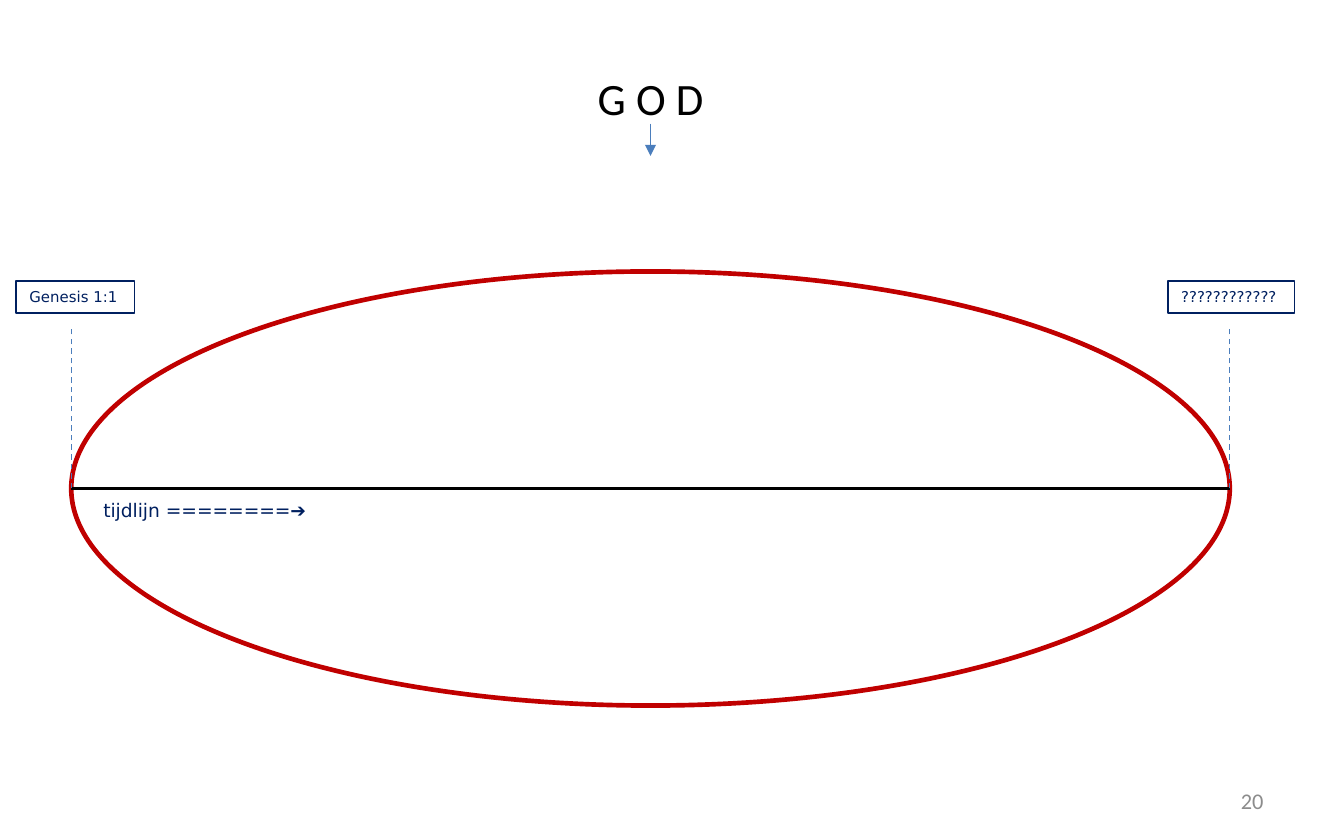
from lxml.etree import SubElement
from pptx import Presentation
from pptx.dml.color import RGBColor
from pptx.enum.dml import MSO_LINE
from pptx.enum.shapes import MSO_CONNECTOR, MSO_SHAPE
from pptx.enum.text import MSO_ANCHOR, PP_ALIGN
from pptx.oxml.ns import qn
from pptx.util import Inches, Pt

WHITE = RGBColor(0xFF, 0xFF, 0xFF)
BLACK = RGBColor(0, 0, 0)
GRAY = RGBColor(0x8C, 0x8C, 0x8C)
BLUE = RGBColor(0x4B, 0x7E, 0xBC)
NAVY = RGBColor(0x00, 0x20, 0x60)
RED = RGBColor(0xC0, 0x00, 0x00)


def write(shape, text, size, color, font="DejaVu Sans", align=PP_ALIGN.LEFT,
          anchor=MSO_ANCHOR.TOP, wrap=True):
    frame = shape.text_frame
    frame.word_wrap = wrap
    frame.vertical_anchor = anchor
    frame.margin_left = frame.margin_right = Inches(0.1)
    frame.margin_top = frame.margin_bottom = Inches(0.05)
    par = frame.paragraphs[0]
    par.alignment = align
    run = par.add_run()
    run.text = text
    run.font.size = Pt(size)
    run.font.name = font
    run.font.color.rgb = color


def draw(slide, kind, box, fill=None, color=None, width=0.75):
    shape = slide.shapes.add_shape(kind, *map(Inches, box))
    shape.shadow.inherit = False
    if fill is None:
        shape.fill.background()
    else:
        shape.fill.solid()
        shape.fill.fore_color.rgb = fill
    if color is None:
        shape.line.fill.background()
    else:
        shape.line.color.rgb = color
        shape.line.width = Pt(width)
    return shape


def link(slide, start, end, color=BLUE, width=0.75, dash=None, arrow=False):
    line = slide.shapes.add_connector(
        MSO_CONNECTOR.STRAIGHT, *map(Inches, start + end))
    line.line.color.rgb = color
    line.line.width = Pt(width)
    if dash:
        line.line.dash_style = dash
    if arrow:
        SubElement(line.line._get_or_add_ln(), qn("a:tailEnd"), type="triangle")
    SubElement(line._element.spPr, qn("a:effectLst"))


def header(slide, box):
    left, top, width, height = box
    title = slide.shapes.title
    title.left, title.top, title.width, title.height = map(Inches, box)
    write(title, "G O D", 24, BLACK, font="Calibri",
          align=PP_ALIGN.CENTER, anchor=MSO_ANCHOR.MIDDLE)
    mid = left + width / 2
    link(slide, (mid, 0.92), (mid, 1.16), arrow=True)


def timeline(slide, box):
    left, top, width, height = box
    right, mid = left + width, top + height / 2
    draw(slide, MSO_SHAPE.OVAL, box, color=RED, width=2.5)
    link(slide, (left, mid), (right, mid), color=BLACK, width=1.25)
    label = draw(slide, MSO_SHAPE.RECTANGLE,
                 (left + 0.14, mid + 0.03, 3.39, 0.27), fill=WHITE)
    write(label, "tijdlijn ========➔", 10, NAVY)
    for side in (left, right):
        link(slide, (side, mid), (side, top + 0.4), dash=MSO_LINE.DASH)
    for x, wide, text in ((0.12, 0.88, "Genesis 1:1"),
                          (8.69, 0.94, "????????????")):
        tag = draw(slide, MSO_SHAPE.RECTANGLE, (x, top + 0.07, wide, 0.24),
                   fill=WHITE, color=NAVY)
        write(tag, text, 8, NAVY, wrap=False)


def footer(slide, box):
    number = slide.shapes.add_textbox(*map(Inches, box))
    write(number, "20", 12, GRAY, font="Calibri",
          align=PP_ALIGN.RIGHT, anchor=MSO_ANCHOR.MIDDLE)


def main():
    deck = Presentation()
    deck.slide_width, deck.slide_height = Inches(10), Inches(6.25)
    slide = deck.slides.add_slide(deck.slide_layouts[5])
    header(slide, (4.29, 0.45, 1.1, 0.55))
    timeline(slide, (0.53, 2.02, 8.62, 3.23))
    footer(slide, (7.17, 5.79, 2.33, 0.33))
    deck.save("out.pptx")


if __name__ == "__main__":
    main()
